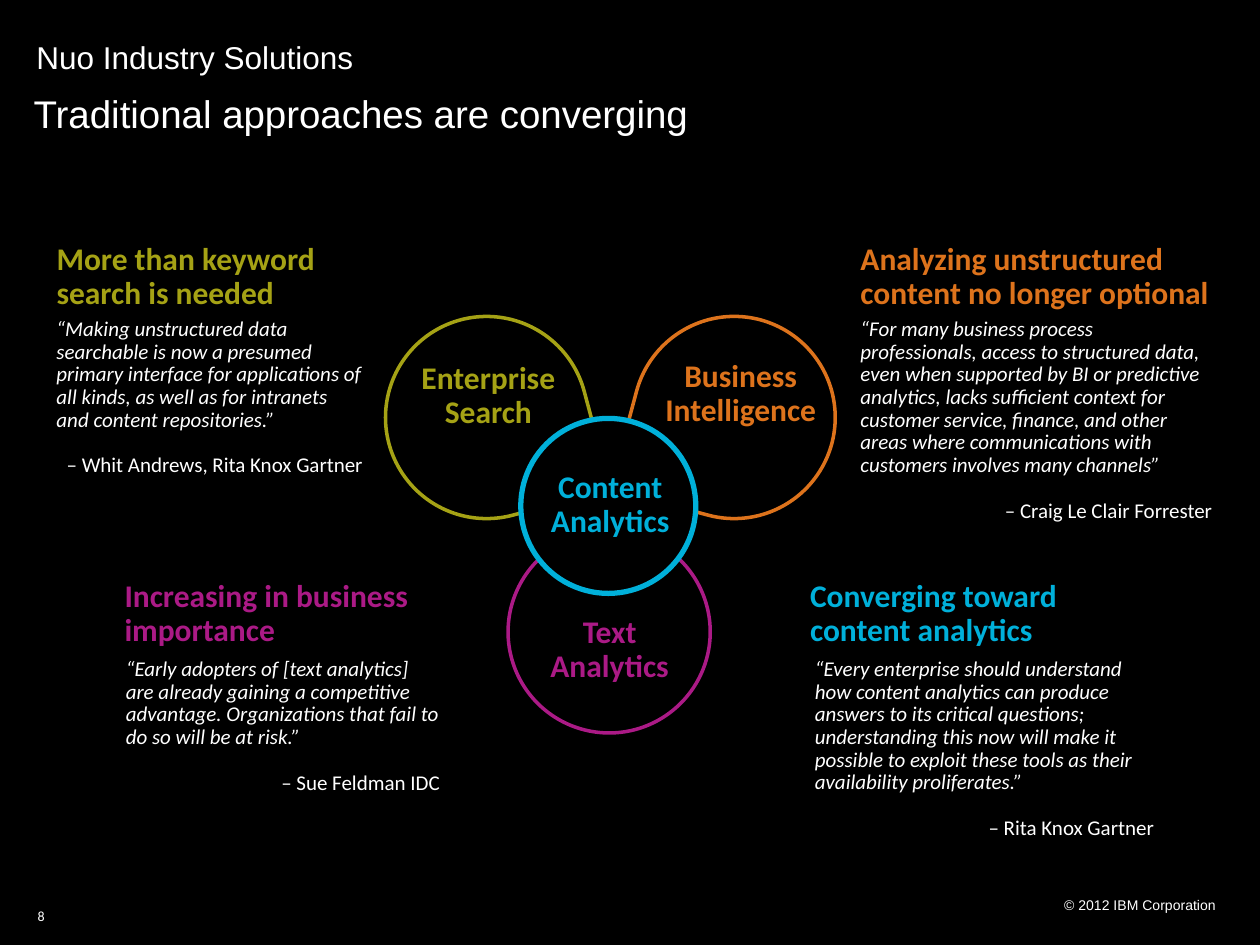
from math import cos, radians, sin, sqrt

from pptx import Presentation
from pptx.dml.color import RGBColor
from pptx.enum.shapes import MSO_SHAPE as Shape
from pptx.enum.text import PP_ALIGN as Align
from pptx.util import Pt

BLACK = RGBColor(0x00, 0x00, 0x00)
WHITE = RGBColor(0xFF, 0xFF, 0xFF)
OLIVE = RGBColor(0xA5, 0xA2, 0x15)
ORANGE = RGBColor(0xDD, 0x73, 0x1C)
PURPLE = RGBColor(0xAB, 0x1A, 0x86)
CYAN = RGBColor(0x00, 0xB0, 0xDA)


class SlideBuilder:
    """Holds the text style and the current slide."""

    heading_font = "Arial"
    body_font = "Calibri"
    heading_size = 18
    quote_size = 12
    spacing = 0.9
    quote_gap = 13.2  # one line of quote text

    def __init__(self, page):
        self.page = page
        page.background.fill.solid()
        page.background.fill.fore_color.rgb = BLACK

    def text(self, area, words, size, color, font=body_font,
             align=Align.LEFT, bold=False, spacing=None):
        box = self.page.shapes.add_textbox(*map(Pt, area))
        frame = box.text_frame
        frame.word_wrap = True
        frame.text = words
        for para in frame.paragraphs:
            para.alignment = align
            if spacing:
                para.line_spacing = spacing
            for span in para.runs:
                span.font.name = font
                span.font.size = Pt(size)
                span.font.bold = bold
                span.font.color.rgb = color
        return frame

    def heading(self, area, words, color, align=Align.LEFT):
        self.text(area, words, self.heading_size, color, align=align,
                  bold=True, spacing=self.spacing)

    def quote(self, area, words, speaker):
        frame = self.text(area, f"{words}\n{speaker}", self.quote_size, WHITE,
                          spacing=self.spacing)
        saying, credit = frame.paragraphs
        saying.runs[0].font.italic = True
        credit.alignment = Align.RIGHT
        credit.space_before = Pt(self.quote_gap)

    def outline(self, kind, center, diameter, color, width):
        left, top = (value - diameter / 2 for value in center)
        shape = self.page.shapes.add_shape(
            kind, Pt(left), Pt(top), Pt(diameter), Pt(diameter))
        shape.shadow.inherit = False
        shape.fill.background()
        shape.line.color.rgb = color
        shape.line.width = Pt(width)
        return shape

    def teardrop(self, tip, angle, diameter, color):
        """Draw a drop whose point, facing along angle, lies on tip."""
        reach = diameter / sqrt(2)
        center = (tip[0] - reach * cos(radians(angle)),
                  tip[1] - reach * sin(radians(angle)))
        shape = self.outline(Shape.TEAR, center, diameter, color, 2)
        shape.rotation = angle + 45  # an unturned drop points up and right

    def disc(self, center, diameter, color):
        shape = self.outline(Shape.OVAL, center, diameter, color, 3)
        shape.fill.solid()
        shape.fill.fore_color.rgb = BLACK


def main():
    deck = Presentation()
    deck.slide_width, deck.slide_height = Pt(720), Pt(540)
    builder = SlideBuilder(deck.slides.add_slide(deck.slide_layouts[6]))
    arial = builder.heading_font

    # Header and footer
    builder.text((13.7, 18, 240, 29), "Nuo Industry Solutions", 18, WHITE,
                 arial)
    builder.text((12.2, 48.2, 690, 55), "Traditional approaches are converging",
                 22, WHITE, arial)
    builder.text((461.5, 509, 240.5, 16.5), "© 2012 IBM Corporation", 8, WHITE,
                 arial, Align.RIGHT)
    builder.text((14.4, 514.8, 28.8, 14.4), "8", 8, WHITE)

    # Three drops meeting at one point, then the disc over it
    meeting = (348.8, 279.4)
    for angle, color in ((30, OLIVE), (150, ORANGE), (270.5, PURPLE)):
        builder.teardrop(meeting, angle, 115.5, color)
    builder.disc((347.6, 289.1), 100, CYAN)

    # Labels of the circles
    labels = (
        ((164.2, 203.5, 229.7, 46), "Enterprise\nSearch", OLIVE),
        ((336.2, 202.3, 174.2, 46), "Business\nIntelligence", ORANGE),
        ((253.4, 348.5, 190, 46), "Text\nAnalytics", PURPLE),
        ((283.2, 265.7, 131, 46), "Content Analytics", CYAN),
    )
    for area, words, color in labels:
        builder.heading(area, words, color, Align.CENTER)

    # Headings with their quotes
    opinions = (
        ((25.2, 135.4, 188.6, 46), "More than keyword search is needed", OLIVE,
         (25.2, 178.3, 189.4, 98),
         "“Making unstructured data searchable is now a presumed primary "
         "interface for applications of all kinds, as well as for intranets "
         "and content repositories.”",
         "– Whit Andrews, Rita Knox Gartner"),
        ((484.6, 135.4, 221.8, 46),
         "Analyzing unstructured content no longer optional", ORANGE,
         (484.6, 178.3, 215.3, 124.6),
         "“For many business process professionals, access to structured "
         "data, even when supported by BI or predictive analytics, lacks "
         "sufficient context for customer service, finance, and other areas "
         "where communications with customers involves many channels”",
         "– Craig Le Clair Forrester"),
        ((64.1, 327.9, 205.2, 46), "Increasing in business importance", PURPLE,
         (64.8, 372.7, 193.7, 85),
         "“Early adopters of [text analytics] are already gaining a "
         "competitive advantage. Organizations that fail to do so will be "
         "at risk.”",
         "– Sue Feldman IDC"),
        ((455.8, 327.9, 168.5, 46), "Converging toward content analytics", CYAN,
         (458.6, 372.7, 208, 111.6),
         "“Every enterprise should understand how content analytics can "
         "produce answers to its critical questions; understanding this now "
         "will make it possible to exploit these tools as their availability "
         "proliferates.”",
         "– Rita Knox Gartner"),
    )
    for area, words, color, quote_area, saying, speaker in opinions:
        builder.heading(area, words, color)
        builder.quote(quote_area, saying, speaker)

    deck.save("out.pptx")


if __name__ == "__main__":
    main()
